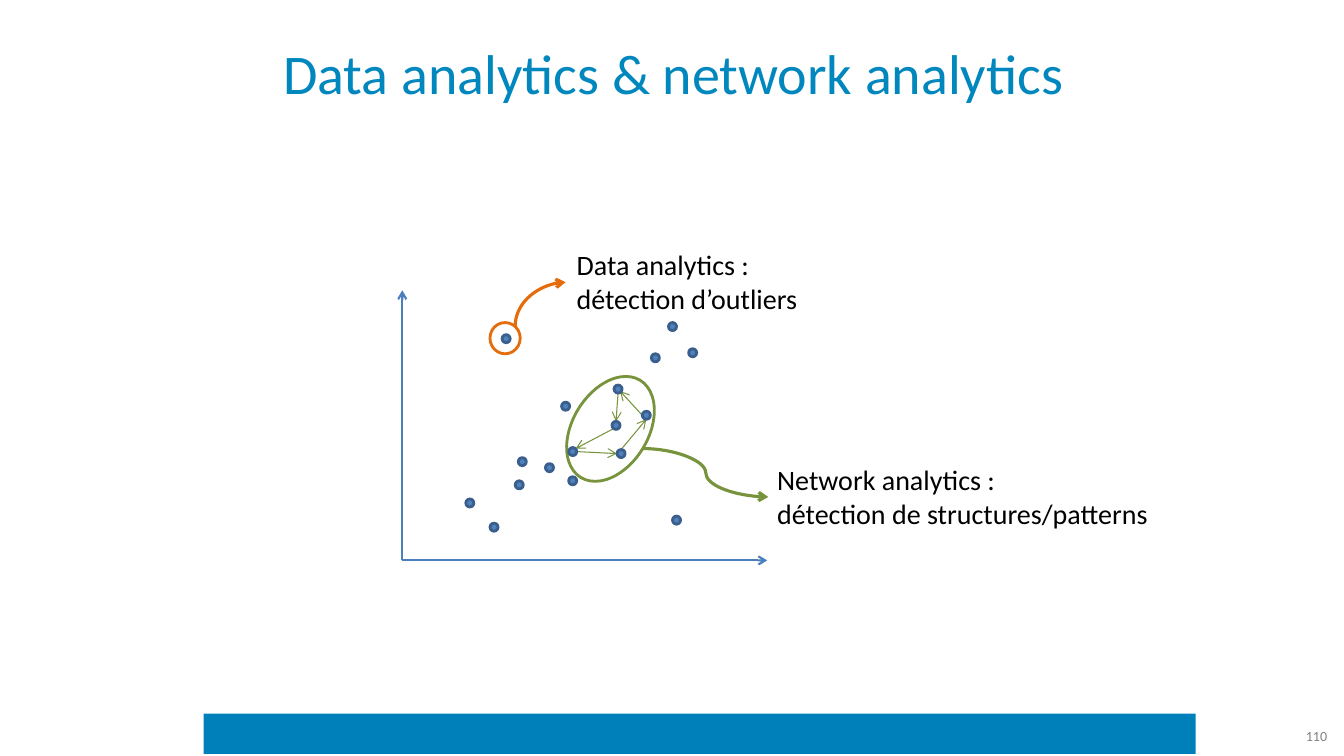
from lxml import etree
from pptx import Presentation
from pptx import util as u
from pptx.dml.color import RGBColor
from pptx.enum import shapes, text
from pptx.oxml.ns import qn

COLUMNS, ROWS = 13.33, 7.5
FONT = "Calibri"
BLUE, ORANGE, GREEN = "4B7EBC", "E46C0A", "77933C"
DOT_FILL, DOT_LINE, DOT_SIZE = "4F81BD", "3A5F8C", 0.08

BAND = (2.02, 7.08, 9.84, 0.4)
TITLE = ((0.68, 0.21, 12, 1.01), [["Data analytics & network analytics"]])
PAGE_NUMBER = ((12.17, 7.1, 1.09, 0.4), [["110"]])
OUTLIER_LABEL = ((5.62, 2.41, 2.48, 0.77), [["Data analytics :", "détection d’outliers"]])
NETWORK_LABEL = ((7.61, 4.54, 3.93, 0.77), [["Network analytics :"], ["détection de structures/patterns"]])

ORIGIN = (3.99, 5.56)
AXIS_ENDS = [(3.99, 2.88), (7.61, 5.56)]
SCATTER = [(4.62, 4.95), (5.14, 4.54), (4.86, 5.19), (5.11, 4.77), (5.64, 4.73),
           (5.41, 4.6), (5.57, 3.99), (6.63, 3.2), (6.67, 5.12), (4.98, 3.32)]
NETWORK = [(6.46, 3.51), (6.37, 4.08), (6.83, 3.46), (5.64, 4.44),
           (6.12, 4.46), (6.07, 4.18), (6.09, 3.82)]
NETWORK_ARROWS = [((6.37, 4.12), (6.15, 3.88)), ((5.72, 4.48), (6.12, 4.5)),
                  ((6.16, 4.46), (6.41, 4.16)), ((6.13, 3.9), (6.11, 4.18)),
                  ((6.09, 4.25), (5.71, 4.45))]
OUTLIER_RING = (4.86, 3.2, 0.3, 0.31)
NETWORK_RING = (5.68, 3.69, 0.75, 1.13)
RING_TILT = 31.4
OUTLIER_CURVE = ((5.58, 3.27), (5.14, 2.77))
NETWORK_CURVE = ((6.38, 4.45), (7.62, 4.93))

deck = Presentation()
deck.slide_width, deck.slide_height = u.Inches(COLUMNS), u.Inches(ROWS)
page = deck.slides.add_slide(deck.slide_layouts[6])


def color(value):
    return RGBColor.from_string(value)


def inches(values):
    return [u.Inches(value) for value in values]


def add_figure(kind, place, fill=None, line=None):
    figure = page.shapes.add_shape(kind, *inches(place))
    figure.shadow.inherit = False
    if fill:
        figure.fill.solid()
        figure.fill.fore_color.rgb = color(fill)
    else:
        figure.fill.background()
    if line:
        figure.line.color.rgb = color(line)
        figure.line.width = u.Pt(2)
    else:
        figure.line.fill.background()
    return figure


def add_dots(corners):
    for corner in corners:
        add_figure(shapes.MSO_SHAPE.OVAL, (*corner, DOT_SIZE, DOT_SIZE), DOT_FILL, DOT_LINE)


def add_arrow(start, end, line, width, kind=shapes.MSO_CONNECTOR.STRAIGHT):
    arrow = page.shapes.add_connector(kind, *inches((*start, *end)))
    arrow.line.color.rgb = color(line)
    arrow.line.width = u.Pt(width)
    etree.SubElement(arrow.line._get_or_add_ln(), qn("a:tailEnd"), type="arrow")
    etree.SubElement(arrow._element.spPr, qn("a:effectLst"))
    return arrow


def add_text(content, size, ink, align=text.PP_ALIGN.LEFT, anchor=text.MSO_ANCHOR.TOP, wrap=True):
    place, paragraphs = content
    frame = page.shapes.add_textbox(*inches(place)).text_frame
    frame.word_wrap = wrap
    frame.vertical_anchor = anchor
    for index, lines in enumerate(paragraphs):
        para = frame.add_paragraph() if index else frame.paragraphs[0]
        para.alignment = align
        for number, line in enumerate(lines):
            if number:
                para.add_line_break()
            span = para.add_run()
            span.text = line
            span.font.name = FONT
            span.font.size = u.Pt(size)
            span.font.color.rgb = color(ink)


add_figure(shapes.MSO_SHAPE.RECTANGLE, BAND, "0080BB")
add_text(TITLE, 40, "0087BE", text.PP_ALIGN.CENTER, text.MSO_ANCHOR.MIDDLE)

for axis_end in AXIS_ENDS:
    add_arrow(ORIGIN, axis_end, BLUE, 1.5)
add_dots(SCATTER)

add_figure(shapes.MSO_SHAPE.OVAL, OUTLIER_RING, line=ORANGE)
add_text(OUTLIER_LABEL, 20, "000000", wrap=False)
outlier_curve = add_arrow(*OUTLIER_CURVE, ORANGE, 2.25, shapes.MSO_CONNECTOR.CURVE)
outlier_properties = outlier_curve._element.spPr
outlier_properties.find(qn("a:prstGeom")).set("prst", "curvedConnector2")
outlier_properties.find(qn("a:xfrm")).set("rot", str(90 * 60000))

for start, end in NETWORK_ARROWS:
    add_arrow(start, end, GREEN, 0.75)
add_figure(shapes.MSO_SHAPE.OVAL, NETWORK_RING, line=GREEN).rotation = RING_TILT
add_text(NETWORK_LABEL, 20, "000000", wrap=False)
add_arrow(*NETWORK_CURVE, GREEN, 2.25, shapes.MSO_CONNECTOR.CURVE)
add_dots(NETWORK)

add_text(PAGE_NUMBER, 10, "808080", text.PP_ALIGN.RIGHT, text.MSO_ANCHOR.MIDDLE)
deck.save("out.pptx")
